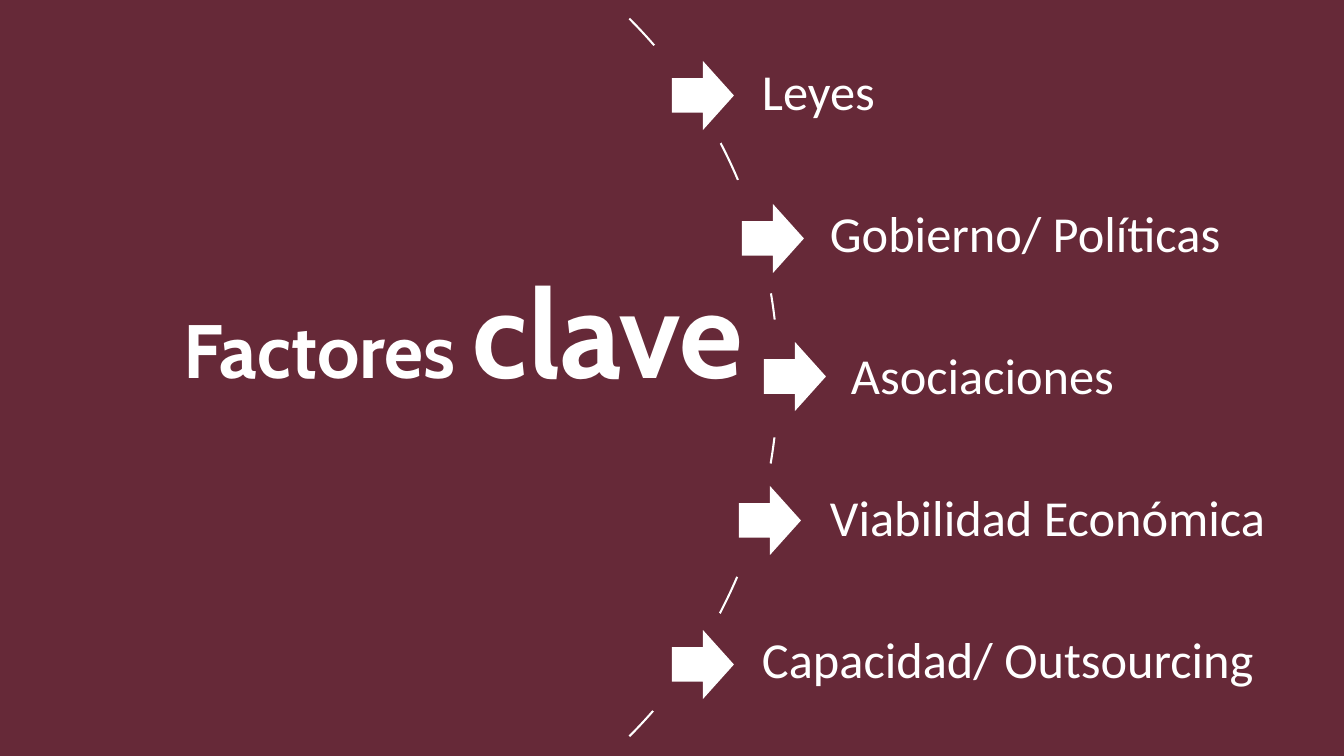
import pptx
import pptx.util
import pptx.dml.color
import pptx.enum.shapes
import pptx.enum.text

SLIDE_WIDTH, SLIDE_HEIGHT = 1344, 756
EMU_PER_PX = 12192000 / SLIDE_WIDTH
COLORS = {"wine": "662938", "white": "FFFFFF"}
SHAPES = pptx.enum.shapes.MSO_SHAPE
TEXT = pptx.enum.text

ROW_TOP, ROW_STEP, ROW_HEIGHT, ROW_RIGHT = 47, 142, 95, 1276
CIRCLE_SIZE = 118
ARROW_WIDTH, ARROW_HEIGHT = 62, 69
FACTORS = [
    ("Leyes", 687, (672, 61)),
    ("Gobierno/ Políticas", 755, (742, 204)),
    ("Asociaciones", 776, (764, 342)),
    ("Viabilidad Económica", 755, (739, 486)),
    ("Capacidad/ Outsourcing", 687, (672, 630)),
]


def px(length):
    return pptx.util.Emu(round(length * EMU_PER_PX))


def rgb(name):
    return pptx.dml.color.RGBColor.from_string(COLORS[name])


def set_attributes(target, values):
    for name, value in values.items():
        setattr(target, name, value)


def add_plain_shape(slide, kind, box, color):
    shape = slide.shapes.add_shape(kind, *map(px, box))
    shape.shadow.inherit = False
    shape.fill.solid()
    shape.fill.fore_color.rgb = rgb(color)
    shape.line.fill.background()
    return shape


def add_run(paragraph, text, font, size, bold):
    run = paragraph.add_run()
    run.text = text
    set_attributes(run.font, {"name": font, "size": pptx.util.Pt(size), "bold": bold})
    run.font.color.rgb = rgb("white")


def format_text(shape, anchor, left_inset):
    inset = pptx.util.Inches(0.1)
    set_attributes(shape.text_frame, {
        "word_wrap": True,
        "auto_size": TEXT.MSO_AUTO_SIZE.NONE,
        "vertical_anchor": anchor,
        "margin_left": left_inset,
        "margin_right": inset,
    })
    paragraph = shape.text_frame.paragraphs[0]
    set_attributes(paragraph, {"alignment": TEXT.PP_ALIGN.LEFT, "line_spacing": 0.9})
    return paragraph


def build_title(slide, box):
    title = slide.shapes.title
    set_attributes(title, dict(zip(("left", "top", "width", "height"), map(px, box))))
    paragraph = format_text(title, TEXT.MSO_ANCHOR.TOP, pptx.util.Inches(0.1))
    add_run(paragraph, "Factores ", "Cabin", 54, True)
    add_run(paragraph, "clave", "Cabin", 88, True)
    title.element.getparent().append(title.element)


def build_arc(slide, box):
    arc = add_plain_shape(slide, SHAPES.BLOCK_ARC, box, "white")
    for index, value in enumerate((189, 27, 0.002)):
        arc.adjustments[index] = value


def build_factor(slide, box, label):
    left, top, width, height = box
    row = add_plain_shape(slide, SHAPES.RECTANGLE, box, "wine")
    paragraph = format_text(row, TEXT.MSO_ANCHOR.MIDDLE, px(75))
    add_run(paragraph, label, "Calibri", 36, False)
    circle_box = (left - CIRCLE_SIZE / 2, top + (height - CIRCLE_SIZE) / 2,
                  CIRCLE_SIZE, CIRCLE_SIZE)
    add_plain_shape(slide, SHAPES.OVAL, circle_box, "wine")


def build_arrow(slide, box):
    add_plain_shape(slide, SHAPES.RIGHT_ARROW, box, "white")


def main():
    presentation = pptx.Presentation()
    set_attributes(presentation, {"slide_width": px(SLIDE_WIDTH),
                                  "slide_height": px(SLIDE_HEIGHT)})
    slide = presentation.slides.add_slide(presentation.slide_layouts[5])
    slide.background.fill.solid()
    slide.background.fill.fore_color.rgb = rgb("wine")

    build_arc(slide, (-238, -131, 1017, 1017))
    for index, (label, left, _) in enumerate(FACTORS):
        top = ROW_TOP + index * ROW_STEP
        build_factor(slide, (left, top, ROW_RIGHT - left, ROW_HEIGHT), label)
    for _, _, corner in FACTORS:
        build_arrow(slide, (*corner, ARROW_WIDTH, ARROW_HEIGHT))
    build_title(slide, (173, 267, 589, 227))

    presentation.save("out.pptx")


if __name__ == "__main__":
    main()
